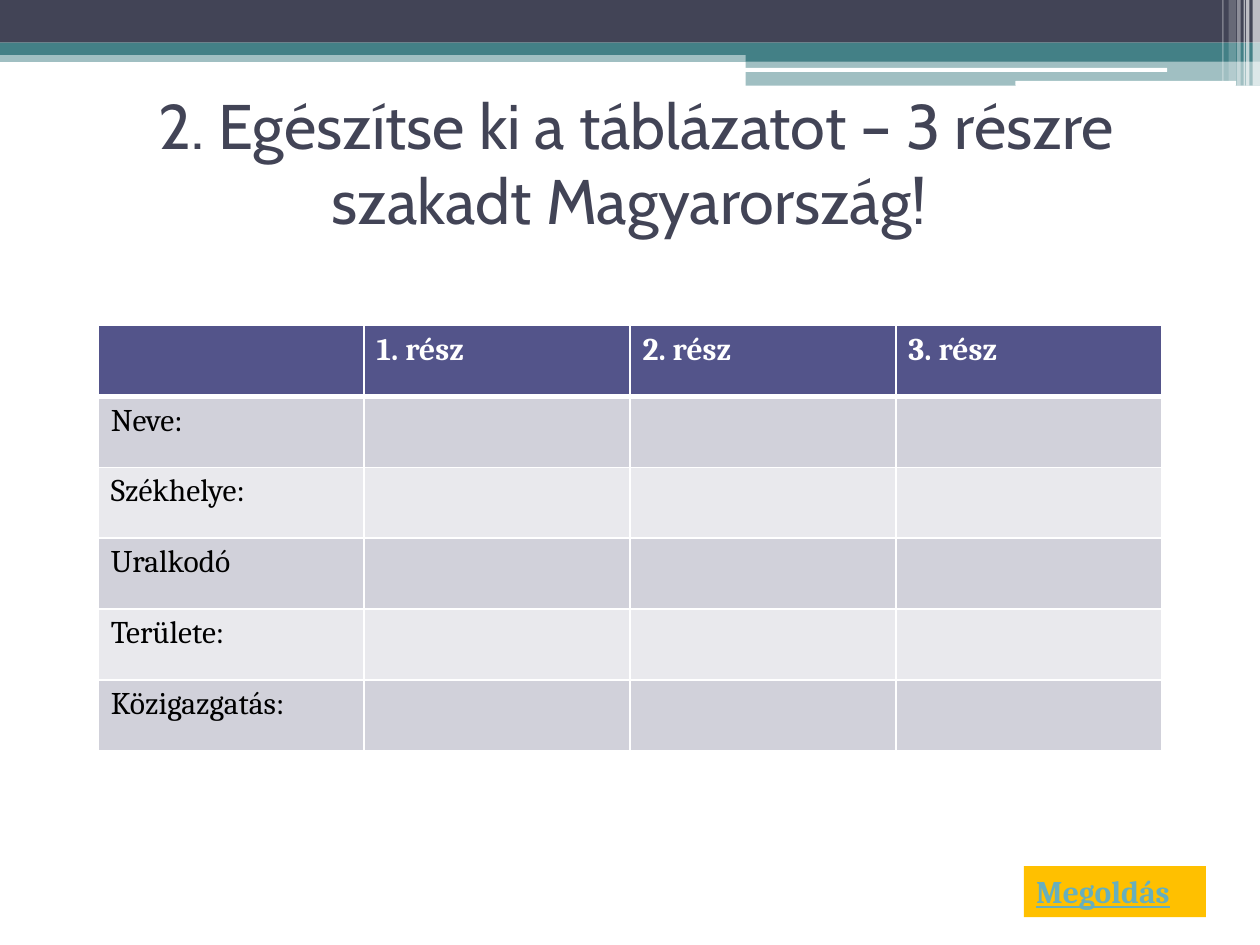
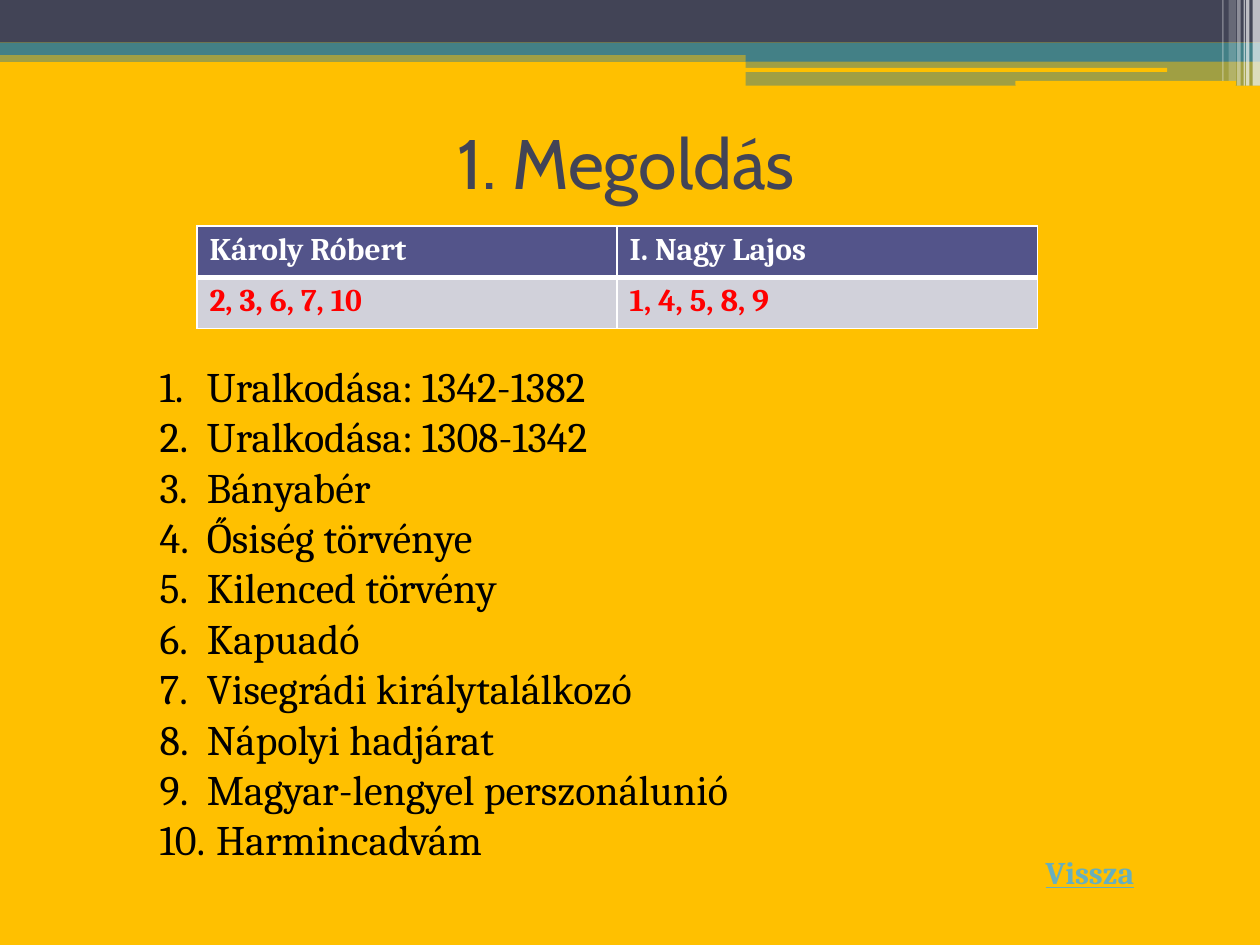
from dataclasses import dataclass
from typing import Optional

from lxml import etree
from pptx import Presentation
from pptx.dml.color import RGBColor
from pptx.enum.shapes import MSO_SHAPE
from pptx.enum.text import MSO_ANCHOR, PP_ALIGN
from pptx.oxml.ns import qn
from pptx.slide import Slide
from pptx.table import _Cell
from pptx.text.text import TextFrame, _Paragraph
from pptx.util import Cm, Pt

RECT = MSO_SHAPE.RECTANGLE
ROUND = MSO_SHAPE.ROUNDED_RECTANGLE
TOP = MSO_ANCHOR.TOP
MIDDLE = MSO_ANCHOR.MIDDLE
LEFT = PP_ALIGN.LEFT
CENTER = PP_ALIGN.CENTER

WHITE = RGBColor(0xFF, 0xFF, 0xFF)
BLACK = RGBColor(0x00, 0x00, 0x00)
RED = RGBColor(0xFF, 0x00, 0x00)
GOLD = RGBColor(0xFF, 0xC0, 0x00)
SLATE = RGBColor(0x42, 0x44, 0x56)
TEAL = RGBColor(0x43, 0x80, 0x86)
AQUA = RGBColor(0x67, 0xAF, 0xBD)
INDIGO = RGBColor(0x53, 0x54, 0x8A)
DARK_ROW = RGBColor(0xD1, 0xD1, 0xDA)
PALE_ROW = RGBColor(0xE9, 0xE9, 0xED)

HEAD_FONT = "Cabin"
BODY_FONT = "Cambria"


@dataclass(frozen=True)
class Box:
    left: float
    top: float
    width: float
    height: float

    def place(self) -> tuple[Cm, Cm, Cm, Cm]:
        return Cm(self.left), Cm(self.top), Cm(self.width), Cm(self.height)


@dataclass(frozen=True)
class Band:
    box: Box
    fill: Optional[RGBColor] = None
    alpha: int = 100
    kind: MSO_SHAPE = RECT


@dataclass(frozen=True)
class Style:
    size: int
    color: RGBColor
    font: str = BODY_FONT
    bold: bool = False
    line: bool = False


@dataclass(frozen=True)
class Grid:
    left: float
    top: float
    wide: float
    high: float
    rows: list[list[str]]
    style: Style


BANDS = [
    Band(Box(0, 1.02, 25.4, 0.23), TEAL, 50),
    Band(Box(0, 0, 25.4, 0.86), SLATE),
    Band(Box(0, 0.86, 25.4, 0.25), TEAL),
    Band(Box(15.03, 0.99, 10.37, 0.25), TEAL),
    Band(Box(15.03, 1.23, 10.37, 0.5), TEAL, 50),
    Band(Box(15.01, 1.37, 8.52, 0.08), kind=ROUND),
    Band(Box(20.47, 1.63, 4.45, 0.1), kind=ROUND),
    Band(Box(25.25, 0, 0.15, 1.73), WHITE, 65),
    Band(Box(25.12, 0, 0.07, 1.73), WHITE, 65),
    Band(Box(25.07, 0, 0.03, 1.73), WHITE, 60),
    Band(Box(24.94, 0, 0.07, 1.73), WHITE, 40),
    Band(Box(24.77, 0, 0.15, 1.63), WHITE, 20),
    Band(Box(24.64, 0, 0.03, 1.63), WHITE, 30),
]

LINK = Style(18, AQUA, bold=True, line=True)
HEAD = Style(18, WHITE, bold=True)
ITEM = Style(24, BLACK)

PARTS = Grid(
    1.98, 6.56, 5.36, 1.43,
    [["", "1. rész", "2. rész", "3. rész"]]
    + [[name, "", "", ""] for name in
       ("Neve:", "Székhelye:", "Uralkodó", "Területe:", "Közigazgatás:")],
    Style(18, BLACK),
)
KINGS = Grid(
    3.97, 4.56, 8.47, 1.03,
    [["Károly Róbert", "I. Nagy Lajos"], ["2, 3, 6, 7, 10", "1, 4, 5, 8, 9"]],
    Style(18, RED, bold=True),
)
FACTS = [
    "Uralkodása: 1342-1382",
    "Uralkodása: 1308-1342",
    "Bányabér",
    "Ősiség törvénye",
    "Kilenced törvény",
    "Kapuadó",
    "Visegrádi királytalálkozó",
    "Nápolyi hadjárat",
    "Magyar-lengyel perszonálunió",
    " Harmincadvám",
]


def add_run(para: _Paragraph, text: str, style: Style) -> None:
    run = para.add_run()
    run.text = text
    run.font.size = Pt(style.size)
    run.font.name = style.font
    run.font.bold = style.bold
    run.font.underline = style.line
    run.font.color.rgb = style.color


def add_band(slide: Slide, band: Band, page: RGBColor) -> None:
    shape = slide.shapes.add_shape(band.kind, *band.box.place())
    shape.shadow.inherit = False
    shape.line.fill.background()
    shape.fill.solid()
    shape.fill.fore_color.rgb = band.fill or page
    if band.alpha < 100:
        tint = shape._element.spPr.find(".//" + qn("a:srgbClr"))
        etree.SubElement(tint, qn("a:alpha"), val=str(band.alpha * 1000))


def add_text(slide: Slide, box: Box, lines: list[str], style: Style,
             align: PP_ALIGN = LEFT, anchor: MSO_ANCHOR = TOP,
             fill: Optional[RGBColor] = None) -> TextFrame:
    shape = slide.shapes.add_textbox(*box.place())
    if fill is not None:
        shape.fill.solid()
        shape.fill.fore_color.rgb = fill
    frame = shape.text_frame
    frame.word_wrap = True
    frame.vertical_anchor = anchor
    for i, text in enumerate(lines):
        para = frame.add_paragraph() if i else frame.paragraphs[0]
        para.alignment = align
        add_run(para, text, style)
    return frame


def number(frame: TextFrame, indent: float) -> None:
    for para in frame.paragraphs:
        props = para._p.get_or_add_pPr()
        props.set("marL", str(Cm(indent)))
        props.set("indent", str(-Cm(indent)))
        etree.SubElement(props, qn("a:buAutoNum"), type="arabicPeriod")


def add_edge(cell: _Cell, sides: dict[str, int]) -> None:
    props = cell._tc.get_or_add_tcPr()
    for i, (side, width) in enumerate(sides.items()):
        edge = etree.Element(qn("a:ln" + side), w=str(Pt(width)))
        fill = etree.SubElement(edge, qn("a:solidFill"))
        etree.SubElement(fill, qn("a:srgbClr"), val=str(WHITE))
        props.insert(i, edge)


def add_grid(slide: Slide, grid: Grid) -> None:
    rows, cols = len(grid.rows), len(grid.rows[0])
    box = Box(grid.left, grid.top, grid.wide * cols, grid.high * rows)
    table = slide.shapes.add_table(rows, cols, *box.place()).table
    for col in table.columns:
        col.width = Cm(grid.wide)
    for r, texts in enumerate(grid.rows):
        table.rows[r].height = Cm(grid.high)
        shade = (DARK_ROW if r % 2 else PALE_ROW) if r else INDIGO
        for c, text in enumerate(texts):
            cell = table.cell(r, c)
            cell.fill.solid()
            cell.fill.fore_color.rgb = shade
            add_edge(cell, {"L": 1, "R": 1, "T": 3 if r == 1 else 1,
                            "B": 1 if r else 3})
            if text:
                add_run(cell.text_frame.paragraphs[0], text,
                        grid.style if r else HEAD)


def add_page(deck: Presentation, page: RGBColor, title: str, left: float,
             size: int) -> Slide:
    slide = deck.slides.add_slide(deck.slide_layouts[6])
    slide.background.fill.solid()
    slide.background.fill.fore_color.rgb = page
    for band in BANDS:
        add_band(slide, band, page)
    add_text(slide, Box(left, 1.78, 22.86, 2.97), [title],
             Style(size, SLATE, HEAD_FONT), CENTER, MIDDLE)
    return slide


def main() -> None:
    deck = Presentation()
    deck.slide_width, deck.slide_height = Cm(25.4), Cm(19.05)

    task = add_page(
        deck, WHITE,
        "2. Egészítse ki a táblázatot – 3 részre szakadt Magyarország! ",
        1.4, 36)
    add_text(task, Box(20.64, 17.46, 3.67, 1.03), ["Megoldás"], LINK, fill=GOLD)
    add_grid(task, PARTS)

    key = add_page(deck, GOLD, "1. Megoldás", 1.19, 40)
    add_text(key, Box(20.83, 17.07, 2.62, 1.03), ["Vissza"], LINK, fill=GOLD)
    add_grid(key, KINGS)
    number(add_text(key, Box(2.97, 7.14, 15.09, 10.52), FACTS, ITEM), 0.95)

    deck.save("out.pptx")


if __name__ == "__main__":
    main()
